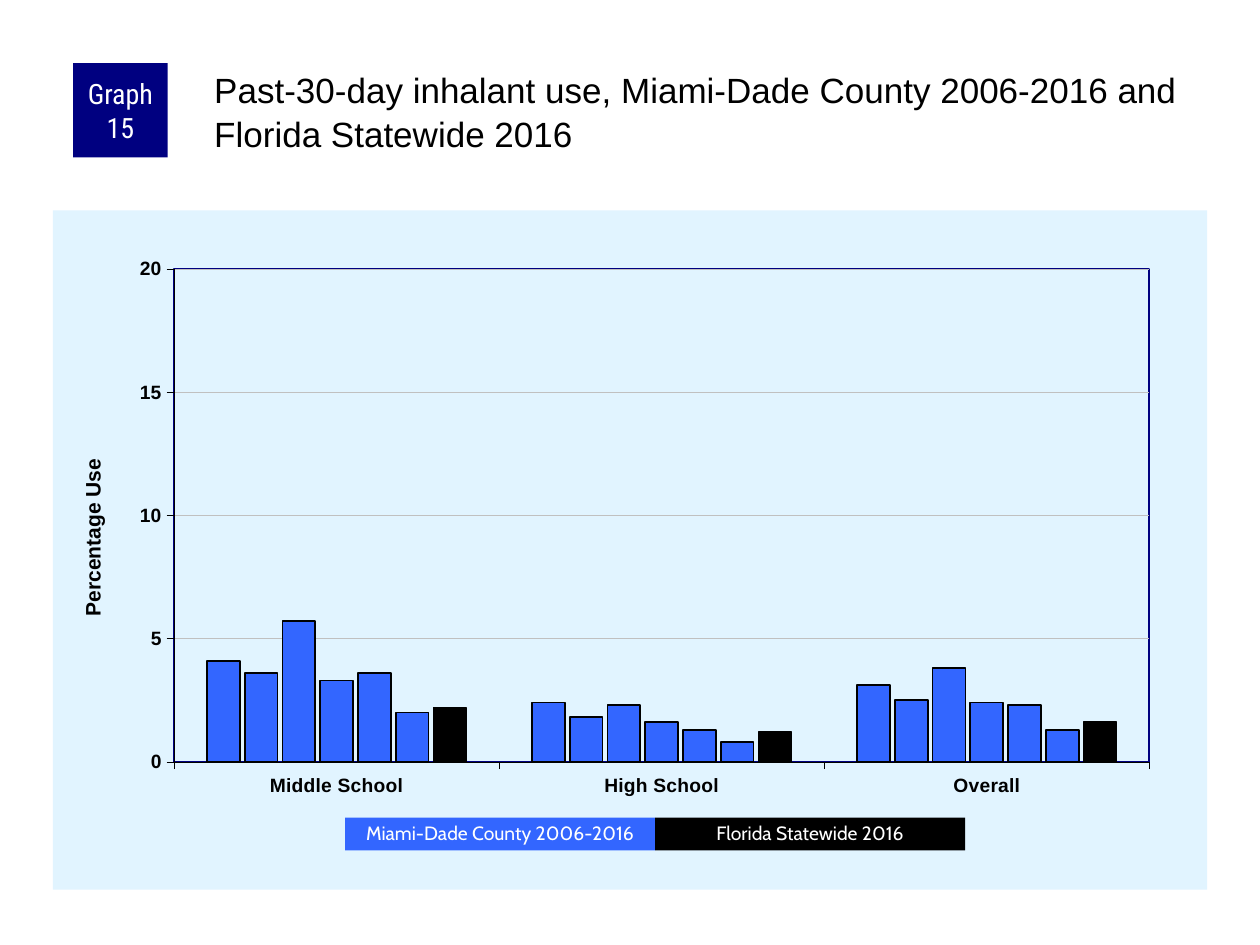
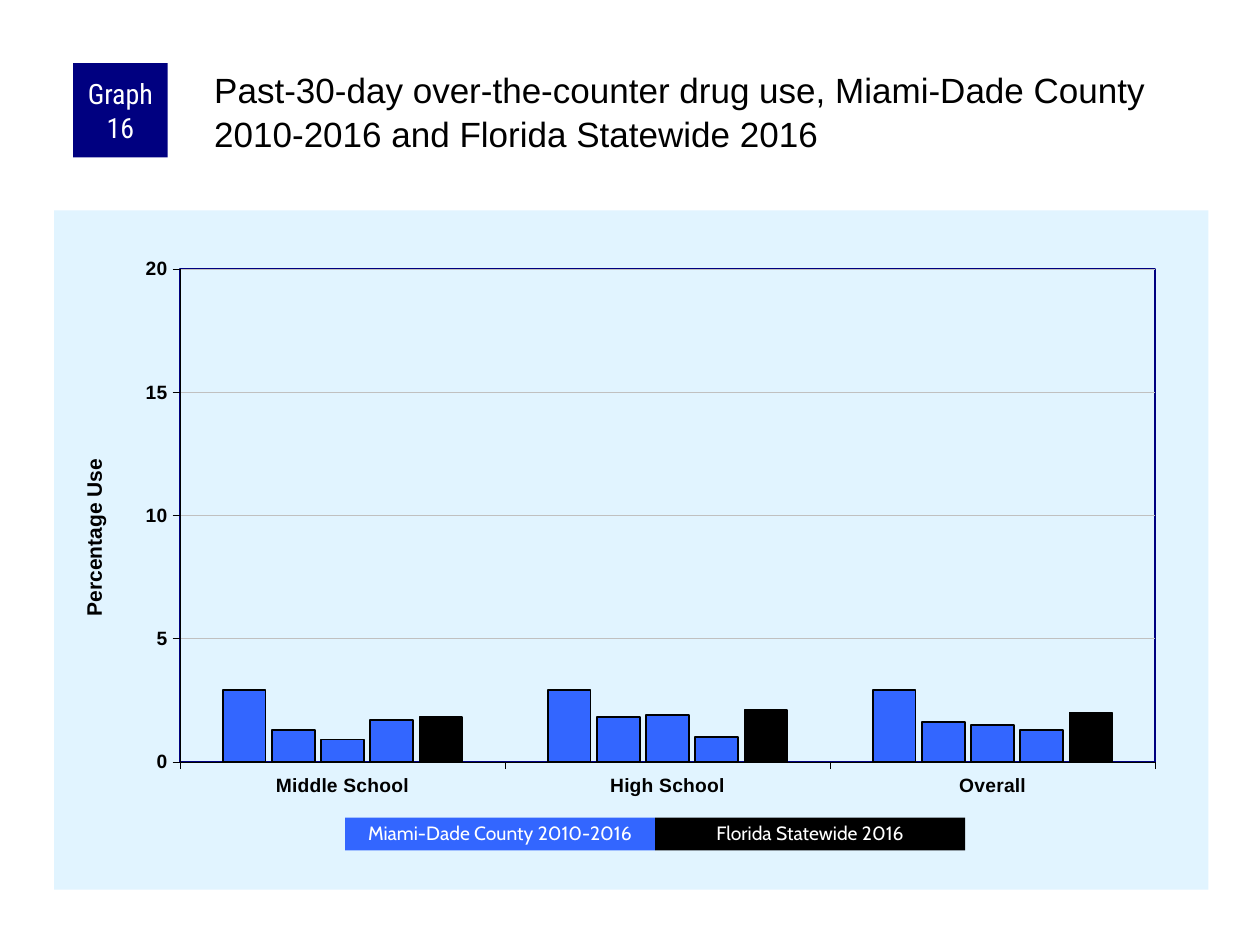
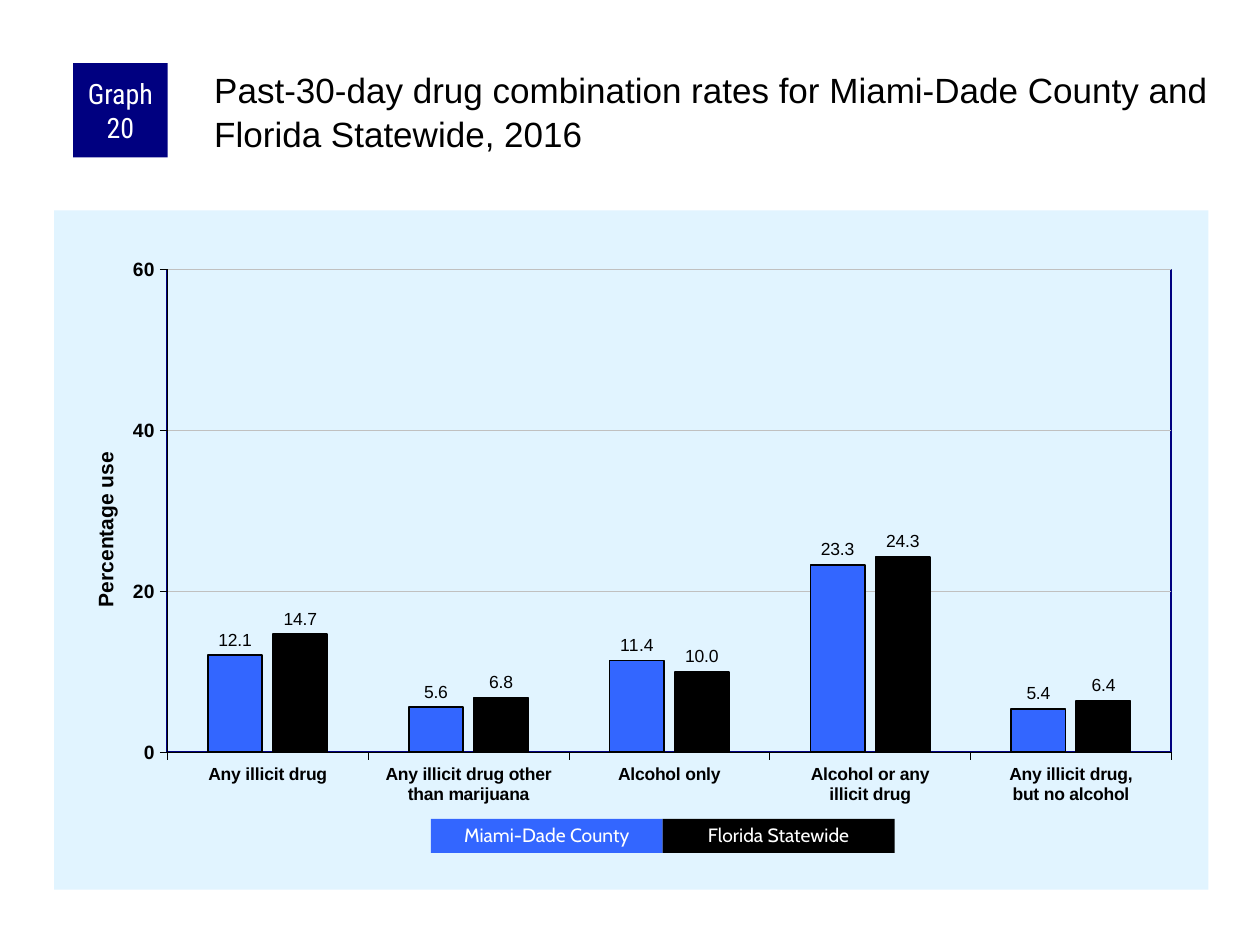
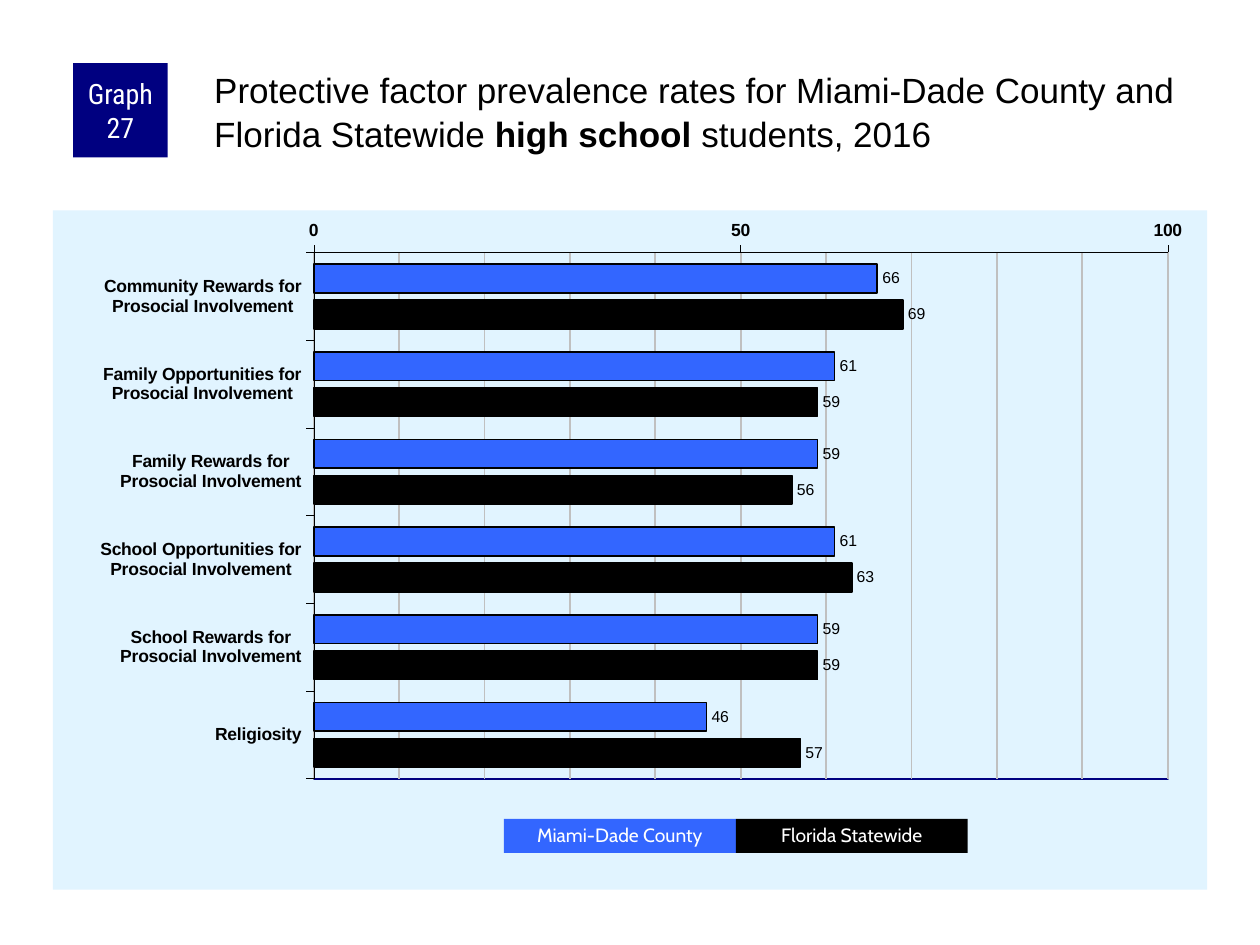
from pptx import Presentation
from pptx.chart.data import CategoryChartData
from pptx.dml.color import RGBColor
from pptx.enum.chart import XL_AXIS_CROSSES, XL_CHART_TYPE, XL_LABEL_POSITION, XL_TICK_MARK
from pptx.enum.shapes import MSO_SHAPE
from pptx.enum.text import MSO_ANCHOR, MSO_AUTO_SIZE, PP_ALIGN
from pptx.oxml import parse_xml
from pptx.oxml.ns import nsdecls
from pptx.util import Inches, Pt

COLORS = {
    "county": "3366FF",
    "state": "000000",
    "badge": "000080",
    "frame": "000080",
    "panel": "E1F4FF",
    "grid": "C0C0C0",
    "text": "000000",
    "light": "FFFFFF",
}
BODY_FONT, BADGE_FONT, LEGEND_FONT = "Arial", "Roboto Condensed", "Cabin"
SCHOOLS = ["Middle School", "High School", "Overall"]


def color(name):
    return RGBColor.from_string(COLORS[name])


def set_values(target, **values):
    for name, value in values.items():
        setattr(target, name, value)


def set_font(font, size, tone="text", name=BODY_FONT, bold=False):
    set_values(font, size=Pt(size), name=name, bold=bold)
    font.color.rgb = color(tone)


def set_line(line, tone, width):
    line.color.rgb = color(tone)
    line.width = Pt(width)


def manual_layout(left, top, size=None):
    parts = ["<c:layoutTarget val='inner'/>"] if size else []
    parts += ["<c:xMode val='edge'/><c:yMode val='edge'/>", f"<c:x val='{left}'/><c:y val='{top}'/>"]
    if size:
        parts.append(f"<c:w val='{size[0]}'/><c:h val='{size[1]}'/>")
    body = "".join(parts)
    return parse_xml(f"<c:layout {nsdecls('c')}><c:manualLayout>{body}</c:manualLayout></c:layout>")


def area_format(fill, line):
    return parse_xml(f"<c:spPr {nsdecls('c', 'a')}>{fill}<a:ln{line}</a:ln></c:spPr>")


def solid(tone):
    return f"<a:solidFill><a:srgbClr val='{COLORS[tone]}'/></a:solidFill>"


class GraphDeck:
    def __init__(self):
        self.deck = Presentation()
        set_values(self.deck, slide_width=Inches(10), slide_height=Inches(7.5))
        self.page = None

    def add_page(self, number, *title_parts):
        self.page = self.deck.slides.add_slide(self.deck.slide_layouts[5])
        self.add_title(title_parts)
        badge = self.add_box(0.58, 0.5, 0.75, 0.75, "badge", f"Graph {number}", 16, BADGE_FONT)
        set_values(badge.text_frame, margin_left=Inches(0.05), margin_right=Inches(0.05),
                   margin_top=0, margin_bottom=0)

    def add_title(self, parts):
        title = self.page.shapes.title
        set_values(title, left=Inches(1.67), top=Inches(0.5), width=Inches(7.92), height=Inches(0.83))
        frame = title.text_frame
        set_values(frame, word_wrap=True, auto_size=MSO_AUTO_SIZE.NONE, vertical_anchor=MSO_ANCHOR.TOP,
                   margin_left=Inches(0.03), margin_top=Inches(0.03), margin_right=0, margin_bottom=0)
        para = frame.paragraphs[0]
        set_values(para, alignment=PP_ALIGN.LEFT, line_spacing=1.05)
        for index, text in enumerate(parts):
            span = para.add_run()
            span.text = text
            set_font(span.font, 20, bold=index % 2 == 1)

    def add_box(self, left, top, width, height, tone, text, size, font):
        box = self.page.shapes.add_shape(
            MSO_SHAPE.RECTANGLE, Inches(left), Inches(top), Inches(width), Inches(height))
        box.shadow.inherit = False
        box.fill.solid()
        box.fill.fore_color.rgb = color(tone)
        box.line.fill.background()
        set_values(box.text_frame, word_wrap=True, vertical_anchor=MSO_ANCHOR.MIDDLE)
        para = box.text_frame.paragraphs[0]
        para.alignment = PP_ALIGN.CENTER
        span = para.add_run()
        span.text = text
        set_font(span.font, size, "light", font)
        return box

    def add_legend(self, left, width, county, state, top=6.5, height=0.27):
        for index, (tone, text) in enumerate((("county", county), ("state", state))):
            box = self.add_box(left + index * width, top, width, height, tone, text, 11, LEGEND_FONT)
            box.text_frame.paragraphs[0].line_spacing = 0.9

    def add_chart(self, left, kind, categories, rows, plot_area, gap, overlap, top_value, step,
                  category_size=11, value_size=11, grid_width=0.25):
        data = CategoryChartData()
        data.categories = categories
        for index, row in enumerate(rows, 1):
            data.add_series(f"Series {index}", row)
        chart = self.page.shapes.add_chart(
            kind, Inches(left), Inches(1.67), Inches(9.16), Inches(5.39), data).chart
        set_values(chart, has_legend=False, has_title=False)
        set_font(chart.font, 10)
        set_values(chart.plots[0], gap_width=gap, overlap=overlap, vary_by_categories=False)
        series_list = list(chart.plots[0].series)
        for series in series_list:
            tone = "state" if series is series_list[-1] else "county"
            series.invert_if_negative = False
            series.format.fill.solid()
            series.format.fill.fore_color.rgb = color(tone)
            set_line(series.format.line, "text", 1)
        for axis, size in ((chart.category_axis, category_size), (chart.value_axis, value_size)):
            set_values(axis, major_tick_mark=XL_TICK_MARK.OUTSIDE, minor_tick_mark=XL_TICK_MARK.NONE)
            set_line(axis.format.line, "text", 0.25)
            set_font(axis.tick_labels.font, size, bold=True)
        set_values(chart.value_axis, minimum_scale=0, maximum_scale=top_value, major_unit=step,
                   has_major_gridlines=True)
        set_line(chart.value_axis.major_gridlines.format.line, "grid", grid_width)
        self.format_areas(chart, plot_area)
        return chart

    def format_areas(self, chart, plot_area):
        left, top, width, height = plot_area
        area = chart.element.xpath("c:chart/c:plotArea")[0]
        for layout in area.xpath("c:layout"):
            area.remove(layout)
        area.insert(0, manual_layout(left, top, (width, height)))
        area.append(area_format("<a:noFill/>", f" w='{Pt(1)}'>{solid('frame')}"))
        chart.element.xpath("c:chart")[0].addnext(area_format(solid("panel"), "><a:noFill/>"))

    def add_minor_gridlines(self, chart, step):
        set_values(chart.value_axis, has_minor_gridlines=True, minor_unit=step)
        for gridlines in chart.element.xpath(".//c:minorGridlines"):
            gridlines.append(area_format("", f" w='{Pt(1)}'>{solid('grid')}"))

    def add_axis_title(self, chart, text, left, top):
        title = chart.value_axis.axis_title
        para = title.text_frame.paragraphs[0]
        span = para.add_run()
        span.text = text
        set_font(span.font, 12, bold=True)
        for layout in title.element.xpath("c:layout"):
            title.element.replace(layout, manual_layout(left, top))

    def add_value_labels(self, chart, size, number_format):
        for series in chart.plots[0].series:
            labels = series.data_labels
            set_values(labels, show_value=True, position=XL_LABEL_POSITION.OUTSIDE_END,
                       number_format=number_format, number_format_is_linked=False)
            set_font(labels.font, size)

    def add_trend_page(self, number, title, years, left, plot_left, rows):
        self.add_page(number, title)
        chart = self.add_chart(left, XL_CHART_TYPE.COLUMN_CLUSTERED, SCHOOLS, rows,
                               (plot_left, 0.086, 0.845, 0.726), 200, -15, 20, 5)
        self.add_axis_title(chart, "Percentage Use", 0.02, 0.36)
        self.add_legend(2.74, 2.46, f"Miami-Dade County {years}", "Florida Statewide 2016", 6.49, 0.26)


def main():
    graphs = GraphDeck()
    graphs.add_trend_page(
        15, "Past-30-day inhalant use, Miami-Dade County 2006-2016 and Florida Statewide 2016",
        "2006-2016", 0.42, 0.105,
        [(4.1, 2.4, 3.1), (3.6, 1.8, 2.5), (5.7, 2.3, 3.8), (3.3, 1.6, 2.4),
         (3.6, 1.3, 2.3), (2, 0.8, 1.3), (2.2, 1.2, 1.6)])
    graphs.add_trend_page(
        16, "Past-30-day over-the-counter drug use, Miami-Dade County 2010-2016 and Florida Statewide 2016",
        "2010-2016", 0.43, 0.109,
        [(2.9, 2.9, 2.9), (1.3, 1.8, 1.6), (0.9, 1.9, 1.5), (1.7, 1, 1.3), (1.8, 2.1, 2)])

    graphs.add_page(20, "Past-30-day drug combination rates for Miami-Dade County and Florida Statewide, 2016")
    combinations = ["Any illicit drug", "Any illicit drug other than marijuana", "Alcohol only",
                    "Alcohol or any\nillicit drug", "Any illicit drug,\nbut no alcohol"]
    chart = graphs.add_chart(
        0.43, XL_CHART_TYPE.COLUMN_CLUSTERED, combinations,
        [(12.1, 5.6, 11.4, 23.3, 5.4), (14.7, 6.8, 10, 24.3, 6.4)],
        (0.098, 0.087, 0.87, 0.711), 150, -20, 60, 20, category_size=10)
    graphs.add_axis_title(chart, "Percentage use", 0.03, 0.35)
    graphs.add_value_labels(chart, 10, "0.0")
    graphs.add_legend(3.42, 1.84, "Miami-Dade County", "Florida Statewide")

    graphs.add_page(27, "Protective factor prevalence rates for Miami-Dade County and Florida Statewide ",
                    "high school ", "students, 2016")
    factors = [f"{name} for\nProsocial Involvement" for name in (
        "Community Rewards", "Family Opportunities", "Family Rewards",
        "School Opportunities", "School Rewards")] + ["Religiosity"]
    chart = graphs.add_chart(
        0.42, XL_CHART_TYPE.BAR_CLUSTERED, factors,
        [(66, 61, 59, 61, 59, 46), (69, 59, 56, 63, 59, 57)],
        (0.226, 0.062, 0.74, 0.775), 80, -25, 100, 50, category_size=10, value_size=10, grid_width=1)
    set_values(chart.category_axis, reverse_order=True, crosses=XL_AXIS_CROSSES.MAXIMUM)
    graphs.add_minor_gridlines(chart, 10)
    graphs.add_value_labels(chart, 9, "0")
    graphs.add_legend(4, 1.84, "Miami-Dade County", "Florida Statewide")

    graphs.deck.save("out.pptx")


if __name__ == "__main__":
    main()
